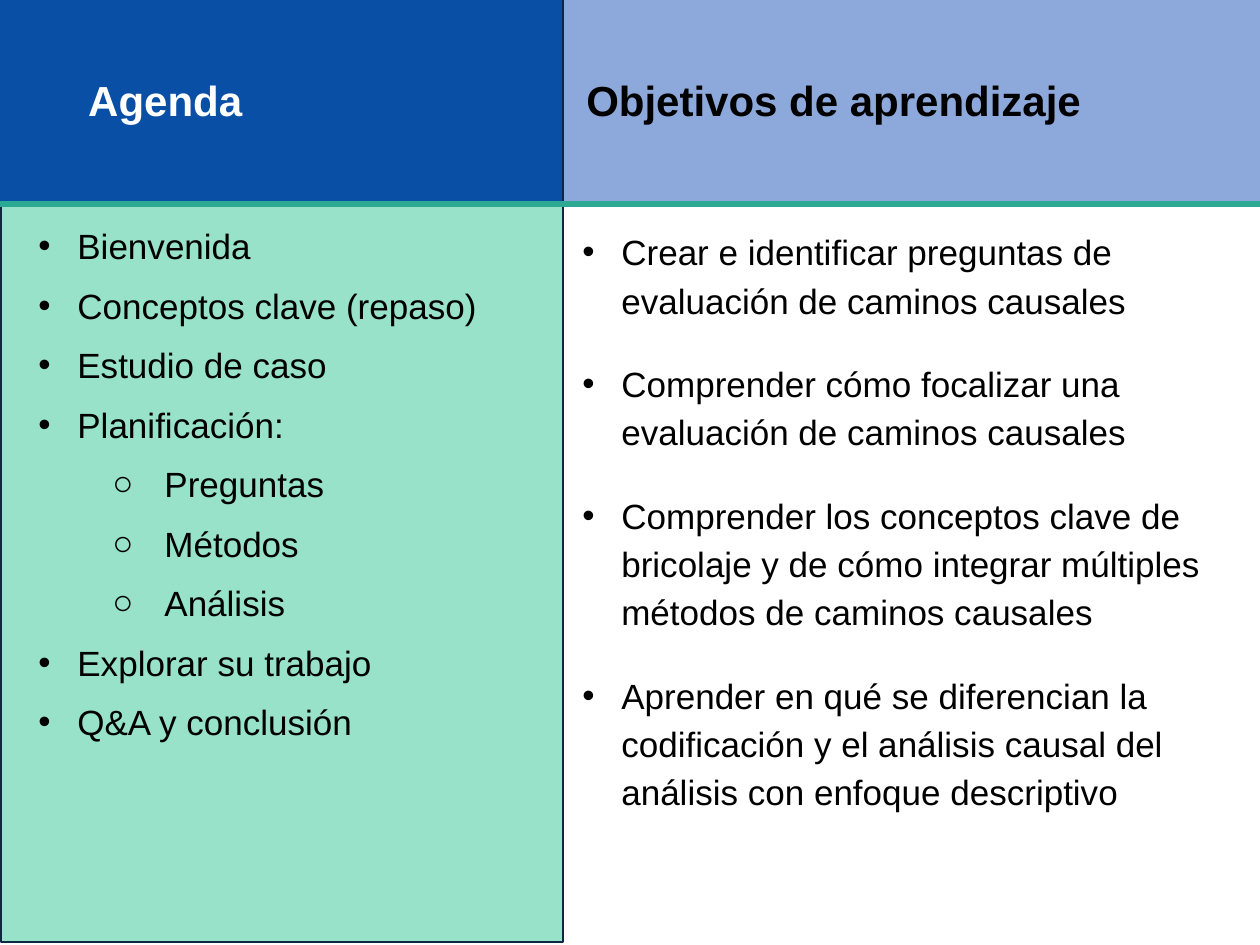
import pptx
import pptx.dml.color
import pptx.enum.shapes
import pptx.enum.text
import pptx.oxml
import pptx.oxml.ns
import pptx.util

COLORS = {
    "blue": "0A4FA6",
    "periwinkle": "8DA9DB",
    "mint": "97E2C8",
    "navy": "0E2841",
    "teal": "2BA992",
    "white": "FFFFFF",
    "black": "000000",
}
FONT = "Arial"
PX = 914400 / 126
BULLETS = {0: ("•", 39, -39), 1: ("○", 126, -52)}

AGENDA = [
    ("Bienvenida", 0),
    ("Conceptos clave (repaso)", 0),
    ("Estudio de caso", 0),
    ("Planificación:", 0),
    ("Preguntas", 1),
    ("Métodos", 1),
    ("Análisis", 1),
    ("Explorar su trabajo", 0),
    ("Q&A y conclusión", 0),
]
OBJECTIVES = [
    ("Crear e identificar preguntas de evaluación de caminos causales", 0),
    ("Comprender cómo focalizar una evaluación de caminos causales", 0),
    ("Comprender los conceptos clave de bricolaje y de cómo integrar "
     "múltiples métodos de caminos causales", 0),
    ("Aprender en qué se diferencian la codificación y el análisis causal "
     "del análisis con enfoque descriptivo", 0),
]


def emu(px):
    return pptx.util.Emu(round(px * PX))


def rgb(name):
    return pptx.dml.color.RGBColor.from_string(COLORS[name])


def add_element(parent, tag, **attributes):
    element = pptx.oxml.parse_xml(f"<a:{tag} {pptx.oxml.ns.nsdecls('a')}/>")
    for key, value in attributes.items():
        element.set(key, value)
    parent.append(element)
    return element


class AgendaPage:
    def __init__(self, deck):
        self.page = deck.slides.add_slide(deck.slide_layouts[6])

    def panel(self, left, top, width, height, fill, line=None):
        kind = pptx.enum.shapes.MSO_SHAPE.RECTANGLE
        shape = self.page.shapes.add_shape(kind, *map(emu, (left, top, width, height)))
        shape.shadow.inherit = False
        shape.fill.solid()
        shape.fill.fore_color.rgb = rgb(fill)
        if line:
            shape.line.color.rgb = rgb(line)
            shape.line.width = pptx.util.Pt(0.75)
        else:
            shape.line.fill.background()

    def rule(self, left, right, y, color):
        kind = pptx.enum.shapes.MSO_CONNECTOR.STRAIGHT
        line = self.page.shapes.add_connector(kind, *map(emu, (left, y, right, y)))
        line.line.color.rgb = rgb(color)
        line.line.width = pptx.util.Pt(3)
        add_element(line._element.spPr, "effectLst")

    def text_box(self, left, top, width, height, inset):
        box = self.page.shapes.add_textbox(*map(emu, (left, top, width, height)))
        frame = box.text_frame
        frame.word_wrap = True
        frame.margin_left = frame.margin_right = pptx.util.Inches(inset)
        frame.margin_top = frame.margin_bottom = pptx.util.Inches(inset)
        return frame

    def style(self, para, size, color, bold=False):
        for span in para.runs:
            span.font.name = FONT
            span.font.size = pptx.util.Pt(size)
            span.font.bold = bold
            span.font.color.rgb = rgb(color)

    def heading(self, left, width, text, color):
        frame = self.text_box(left, 64, width, 77, 0.05)
        frame.vertical_anchor = pptx.enum.text.MSO_ANCHOR.MIDDLE
        frame.text = text
        para = frame.paragraphs[0]
        para.line_spacing = 0.9
        self.style(para, 24, color, bold=True)

    def bullet(self, para, level):
        symbol, margin, indent = BULLETS[level]
        para.level = level
        properties = para._p.get_or_add_pPr()
        properties.set("marL", str(emu(margin)))
        properties.set("indent", str(emu(indent)))
        color = add_element(properties, "buClr")
        add_element(color, "srgbClr", val=COLORS["black"])
        add_element(properties, "buFont", typeface=FONT)
        add_element(properties, "buChar", char=symbol)

    def bullet_list(self, left, width, height, items, space, line_spacing=None):
        frame = self.text_box(left, 212, width, height, 0.1)
        frame.auto_size = pptx.enum.text.MSO_AUTO_SIZE.SHAPE_TO_FIT_TEXT
        frame.text = "\n".join(text for text, level in items)
        for index, (para, (text, level)) in enumerate(zip(frame.paragraphs, items)):
            self.bullet(para, level)
            para.space_before = pptx.util.Pt(space if index else 0)
            if line_spacing:
                para.line_spacing = line_spacing
            self.style(para, 20, "black")


def main():
    deck = pptx.Presentation()
    deck.slide_width = emu(1260)
    deck.slide_height = emu(945)

    agenda = AgendaPage(deck)
    agenda.panel(563, -1, 697, 205, "periwinkle")
    agenda.panel(1, -3, 562, 945, "mint", line="navy")
    agenda.panel(0, -1, 562, 205, "blue")
    agenda.rule(0, 1260, 204, "teal")
    agenda.heading(82, 426, "Agenda", "white")
    agenda.bullet_list(26, 512, 566, AGENDA, 10)
    agenda.heading(580, 660, "Objetivos de aprendizaje", "black")
    agenda.bullet_list(570, 680, 654, OBJECTIVES, 20, line_spacing=1.15)

    deck.save("out.pptx")


if __name__ == "__main__":
    main()
